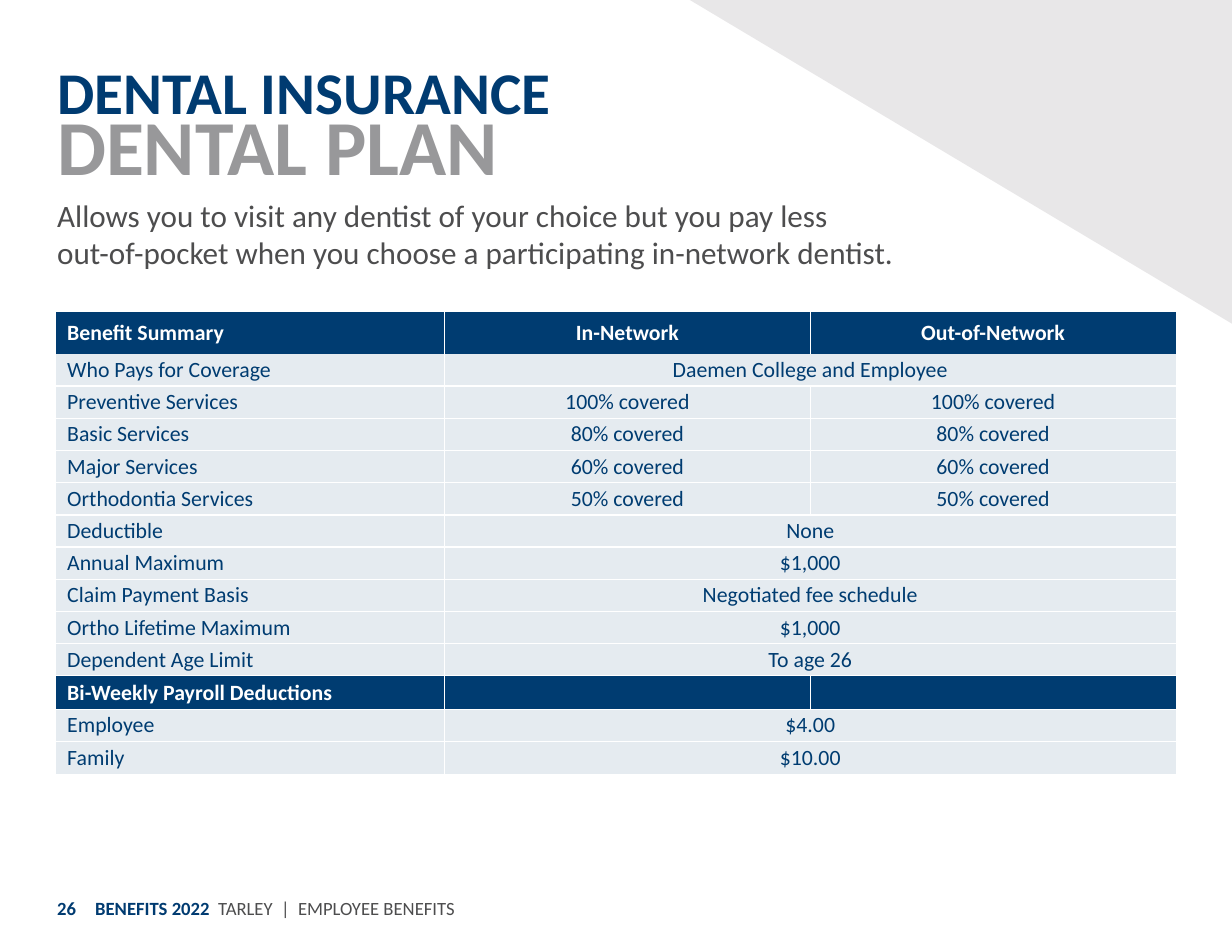
from dataclasses import dataclass

from lxml import etree
from pptx import Presentation
from pptx.dml.color import RGBColor
from pptx.enum.shapes import MSO_SHAPE
from pptx.enum.text import MSO_ANCHOR, MSO_AUTO_SIZE, PP_ALIGN
from pptx.oxml.ns import qn
from pptx.util import Inches, Pt

RIGHT_TRIANGLE = MSO_SHAPE.RIGHT_TRIANGLE
MIDDLE, TOP = MSO_ANCHOR.MIDDLE, MSO_ANCHOR.TOP
CENTER, LEFT = PP_ALIGN.CENTER, PP_ALIGN.LEFT
GROW = MSO_AUTO_SIZE.SHAPE_TO_FIT_TEXT
PLAIN_TABLE_STYLE = "{2D5ABB26-0587-4C30-8999-92F81FD0307C}"


@dataclass(frozen=True)
class Theme:
    font: str = "Calibri"
    navy: str = "003B71"
    table_navy: str = "003C71"
    silver: str = "98989A"
    charcoal: str = "4D4D4E"
    corner: str = "E8E7E8"
    white: str = "FFFFFF"
    tint: int = 10  # opacity of body cells, in percent
    title: int = 38
    subtitle: int = 50
    title_spacing: int = 42
    intro: int = 20
    table: int = 14
    footer: int = 12


THEME = Theme()

HEADER = ("Benefit Summary", "In-Network", "Out-of-Network")
# A row with two entries spreads its value over both network columns
COVERAGE = [
    ("Who Pays for Coverage", "Daemen College and Employee"),
    ("Preventive Services", "100% covered", "100% covered"),
    ("Basic Services", "80% covered", "80% covered"),
    ("Major Services", "60% covered", "60% covered"),
    ("Orthodontia Services", "50% covered", "50% covered"),
    ("Deductible", "None"),
    ("Annual Maximum", "$1,000"),
    ("Claim Payment Basis", "Negotiated fee schedule"),
    ("Ortho Lifetime Maximum", "$1,000"),
    ("Dependent Age Limit", "To age 26"),
]
PAYROLL_HEADER = ("Bi-Weekly Payroll Deductions", "", "")
PAYROLL = [("Employee", "$4.00"), ("Family", "$10.00")]


def style_font(font, size, color, bold=False):
    font.name = THEME.font
    font.size = Pt(size)
    font.bold = bold
    font.color.rgb = RGBColor.from_string(color)


def add_text(page, box, paragraphs, anchor=TOP, inset=0, spacing=None):
    """Each paragraph is a list of (text, size, color, bold) spans."""
    text_box = page.shapes.add_textbox(*(Inches(length) for length in box))
    frame = text_box.text_frame
    frame.word_wrap = True
    frame.vertical_anchor = anchor
    frame.margin_left = frame.margin_right = 0
    frame.margin_top = frame.margin_bottom = Inches(inset)
    for number, spans in enumerate(paragraphs):
        para = frame.add_paragraph() if number else frame.paragraphs[0]
        if spacing:
            para.line_spacing = Pt(spacing)
        for text, size, color, bold in spans:
            for part_number, part in enumerate(text.split("\n")):
                if part_number:
                    para.add_line_break()
                span = para.add_run()
                span.text = part
                style_font(span.font, size, color, bold)
    return frame


def add_corner(page, box):
    triangle = page.shapes.add_shape(RIGHT_TRIANGLE, *(Inches(length) for length in box))
    triangle.shadow.inherit = False
    triangle.fill.solid()
    triangle.fill.fore_color.rgb = RGBColor.from_string(THEME.corner)
    triangle.line.fill.background()
    frame = triangle._element.spPr.find(qn("a:xfrm"))
    frame.set("flipH", "1")
    frame.set("flipV", "1")


def add_heading(page, box):
    frame = add_text(page, box, [
        [("DENTAL INSURANCE", THEME.title, THEME.navy, True)],
        [("DENTAL PLAN", THEME.subtitle, THEME.silver, True)],
    ], spacing=THEME.title_spacing)
    frame.auto_size = GROW


def add_intro(page, box):
    text = ("Allows you to visit any dentist of your choice but you pay less\n"
            "out-of-pocket when you choose a participating in-network dentist.")
    add_text(page, box, [[(text, THEME.intro, THEME.charcoal, False)]])


def add_footer(page, box):
    left, top, width, height = box
    gap = 0.34
    add_text(page, (left + gap, top, width - gap, height), [[
        ("BENEFITS 2022  ", THEME.footer, THEME.navy, True),
        ("TARLEY  |  EMPLOYEE BENEFITS", THEME.footer, THEME.charcoal, False),
    ]], MIDDLE, 0.05)
    add_text(page, (left, top, 0.49, height),
             [[("26", THEME.footer, THEME.navy, True)]], MIDDLE, 0.05)


def fill_cell(cell, is_band):
    cell.fill.solid()
    cell.fill.fore_color.rgb = RGBColor.from_string(THEME.table_navy)
    if not is_band:
        color = cell._tc.tcPr.find(".//" + qn("a:srgbClr"))
        etree.SubElement(color, qn("a:alpha")).set("val", str(THEME.tint * 1000))


def rule_cell(cell, sides):
    """Draw white one-point rules; sides are given in L, R, T, B order."""
    for position, side in enumerate(sides):
        line = etree.Element(qn("a:ln" + side), w=str(Pt(1)))
        fill = etree.SubElement(line, qn("a:solidFill"))
        etree.SubElement(fill, qn("a:srgbClr"), val=THEME.white)
        cell._tc.tcPr.insert(position, line)


def write_cell(cell, text, is_band, is_label):
    cell.margin_left = cell.margin_right = cell.margin_top = cell.margin_bottom = 0
    cell.vertical_anchor = MIDDLE
    cell.text_frame.text = text
    para = cell.text_frame.paragraphs[0]
    para.alignment = LEFT if is_label else CENTER
    if is_label:
        para._p.get_or_add_pPr().set("marL", str(Inches(0.1)))
    for span in para.runs:
        style_font(span.font, THEME.table, THEME.white if is_band else THEME.table_navy, is_band)
    if not text:
        etree.SubElement(para._p, qn("a:endParaRPr"), sz=str(THEME.table * 100))


def add_benefit_table(page, box):
    left, top, width, height = box
    rows = [HEADER, *COVERAGE, PAYROLL_HEADER, *PAYROLL]
    bands = {0: 0.37, rows.index(PAYROLL_HEADER): 0.3}
    body_height = (height - sum(bands.values())) / (len(rows) - len(bands))
    label_width = 3.47
    value_width = (width - label_width) / 2

    frame = page.shapes.add_table(len(rows), 3, *(Inches(length) for length in box))
    table = frame.table
    table.first_row = table.horz_banding = False
    table._tbl.tblPr.find(qn("a:tableStyleId")).text = PLAIN_TABLE_STYLE
    for column, column_width in zip(table.columns, (label_width, value_width, value_width)):
        column.width = Inches(column_width)

    last = len(rows) - 1
    for row, texts in enumerate(rows):
        table.rows[row].height = Inches(bands.get(row, body_height))
        is_band = row in bands
        joined = len(texts) == 2 or texts is PAYROLL_HEADER
        for col in range(3):
            cell = table.cell(row, col)
            write_cell(cell, texts[col] if col < len(texts) else "", is_band, col == 0)
            fill_cell(cell, is_band)
            # Inner rules only; the header meets the first row without one
            drawn = {
                "L": col == 1 or (col == 2 and not joined),
                "R": col == 0 or (col == 1 and not joined),
                "T": row > 1,
                "B": 0 < row < last,
            }
            rule_cell(cell, [side for side, shown in drawn.items() if shown])
        if len(texts) == 2:
            table.cell(row, 1).merge(table.cell(row, 2))


def main():
    deck = Presentation()
    deck.slide_width, deck.slide_height = Inches(11), Inches(8.5)
    page = deck.slides.add_slide(deck.slide_layouts[6])
    add_intro(page, (0.51, 1.75, 8.65, 0.67))
    add_corner(page, (6.16, 0, 4.84, 2.89))
    add_heading(page, (0.51, 0.54, 6.15, 1.22))
    add_footer(page, (0.51, 7.88, 4.73, 0.45))
    add_benefit_table(page, (0.5, 2.79, 10, 4.12))
    deck.save("out.pptx")


if __name__ == "__main__":
    main()
